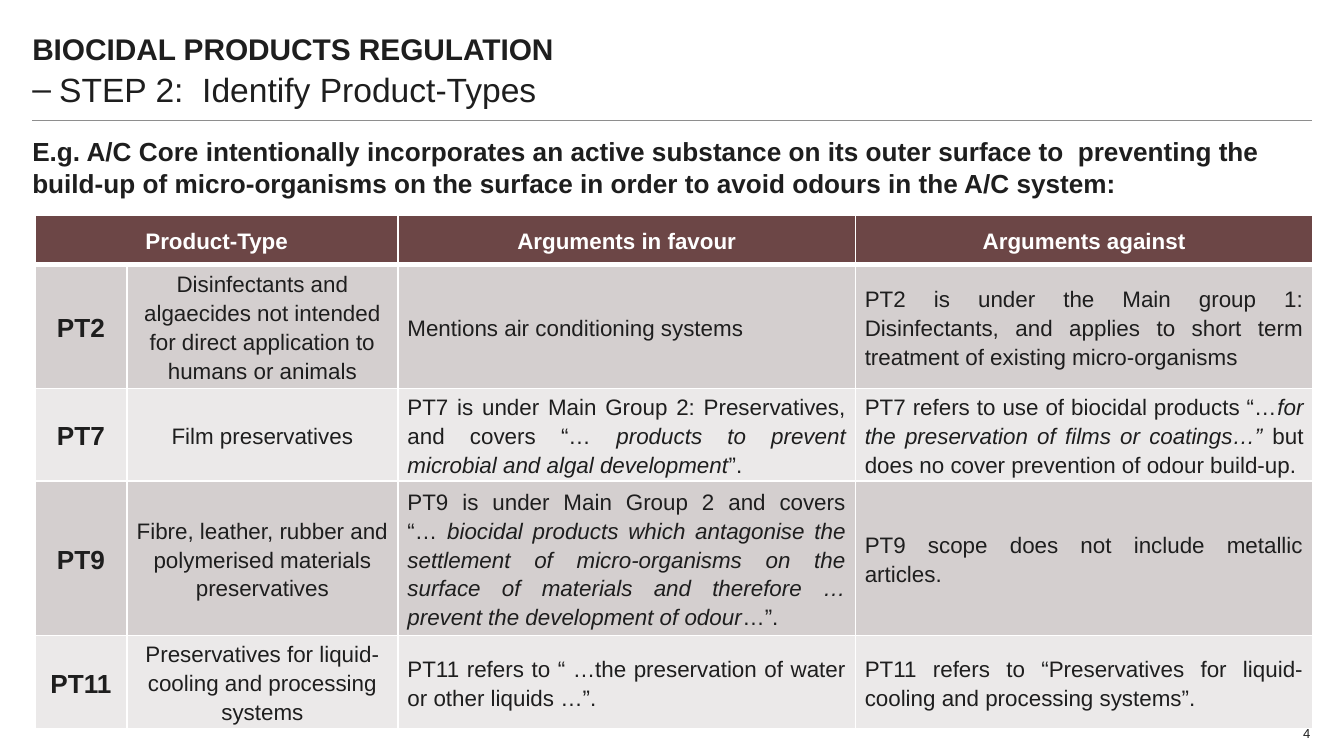
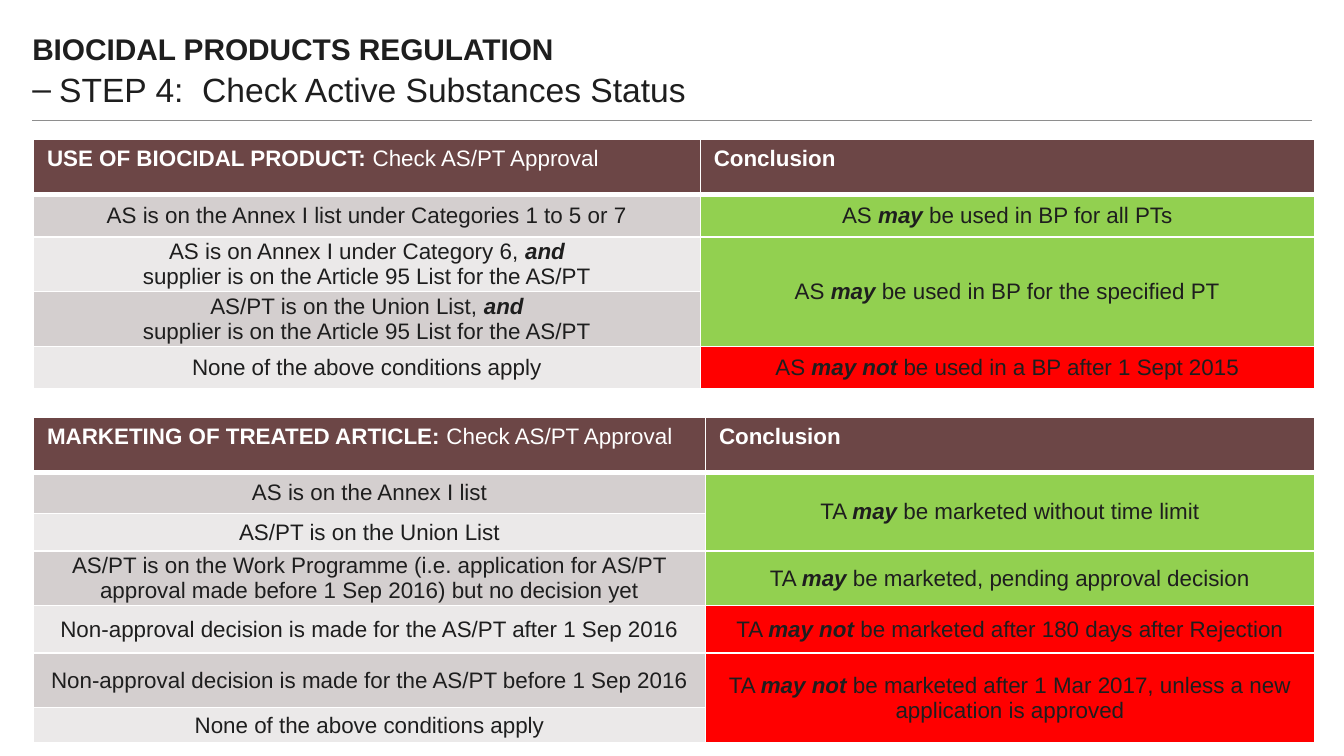
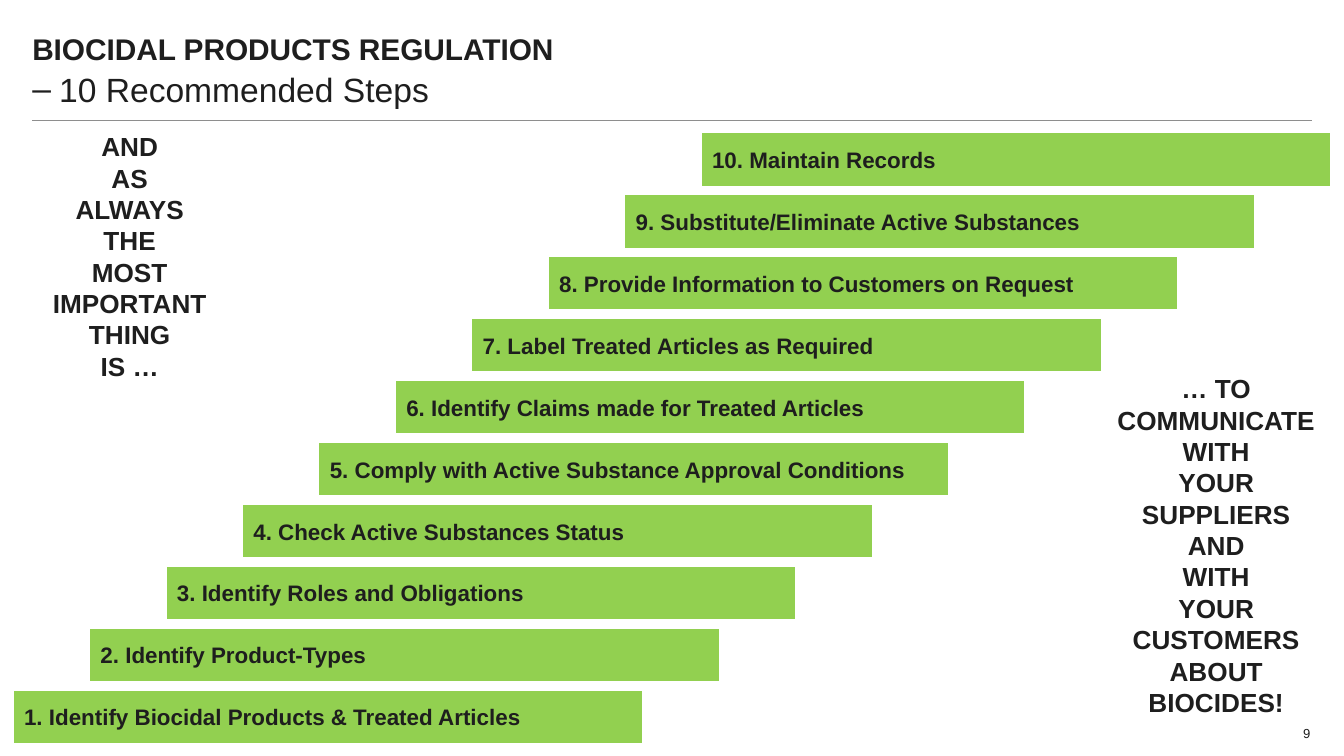
import pptx
import pptx.dml.color
import pptx.enum.shapes
import pptx.enum.text
import pptx.oxml
import pptx.oxml.ns
import pptx.util
from lxml import etree

Pt = pptx.util.Pt
ALIGN = pptx.enum.text.PP_ALIGN
ANCHOR = pptx.enum.text.MSO_ANCHOR

FONT = "Arial"
INK, WHITE, RULE = "1E1E1E", "FFFFFF", "8E8E8E"
HEADER, BANDS = "6C4646", ("D4CFCF", "EBE9E9")
YES, NO = "92D050", "FF0000"
MARGIN, CONTENT_WIDTH = 17.3, 685.4
THIN, THICK = 1, 3
BOLD_ITALIC = {"bold": True, "italic": True}


def colour(value):
    return pptx.dml.color.RGBColor.from_string(value)


def add_element(parent, tag, **attributes):
    return etree.SubElement(parent, pptx.oxml.ns.qn(tag), attributes)


def write(frame, text, size=12, fill=INK, bold=False, emphasis=None,
          align=ALIGN.LEFT, spacing=None, bullet=None, indent=0):
    """Fill a text frame; pieces between bars | take the emphasis format."""
    frame.word_wrap = True
    para = frame.paragraphs[0]
    para.alignment = align
    if spacing:
        para.line_spacing = spacing
    if bullet:
        properties = para._p.get_or_add_pPr()
        properties.set("marL", str(Pt(indent)))
        properties.set("indent", str(-Pt(indent)))
        add_element(properties, "a:buFont", typeface=FONT)
        add_element(properties, "a:buChar", char=bullet)
    for number, piece in enumerate(text.split("|")):
        style = {"bold": bold, "italic": False}
        if number % 2:
            style.update(emphasis or {})
        for line_number, line in enumerate(piece.split("\n")):
            if line_number:
                para.add_line_break()
            if not line:
                continue
            span = para.add_run()
            span.text = line
            span.font.name, span.font.size = FONT, Pt(size)
            span.font.bold, span.font.italic = style["bold"], style["italic"]
            span.font.color.rgb = colour(fill)


def add_text(page, left, top, width, height, text, anchor=ANCHOR.TOP, **style):
    box = page.shapes.add_textbox(Pt(left), Pt(top), Pt(width), Pt(height))
    frame = box.text_frame
    frame.margin_left = frame.margin_right = 0
    frame.margin_top = frame.margin_bottom = 0
    frame.vertical_anchor = anchor
    write(frame, text, **style)


def add_page(deck, title, number=None):
    """Add a page with the shared rule, heading, title and page number."""
    page = deck.slides.add_slide(deck.slide_layouts[6])
    line = page.shapes.add_connector(
        pptx.enum.shapes.MSO_CONNECTOR.STRAIGHT,
        Pt(MARGIN), Pt(64.8), Pt(MARGIN + CONTENT_WIDTH), Pt(64.8))
    line.line.color.rgb = colour(RULE)
    line.line.width = Pt(0.5)
    add_element(line._element.spPr, "a:effectLst")
    add_text(page, MARGIN, 36.7, 522, 24.5, title, size=18, bullet="–", indent=14.4)
    add_text(page, MARGIN, 16.6, 522, 21.6, "BIOCIDAL PRODUCTS REGULATION",
             size=16, bold=True)
    if number:
        add_text(page, 671, 365.8, 31, 31, number, anchor=ANCHOR.BOTTOM,
                 size=7, align=ALIGN.RIGHT)
    return page


def add_borders(cell, top, bottom):
    properties = cell._tc.get_or_add_tcPr()
    edges = {"a:lnL": THIN, "a:lnR": THIN, "a:lnT": top, "a:lnB": bottom}
    for tag, width in edges.items():
        edge = add_element(properties, tag, w=str(Pt(width)))
        add_element(add_element(edge, "a:solidFill"), "a:srgbClr", val=WHITE)


def paint(cell, value):
    cell.fill.solid()
    cell.fill.fore_color.rgb = colour(value)


def add_grid(page, left, top, widths, heights):
    """Add a table with a dark header row and banded rows, still without text."""
    frame = page.shapes.add_table(len(heights), len(widths), Pt(left), Pt(top),
                                  Pt(sum(widths)), Pt(sum(heights)))
    table = frame.table
    table.first_row = table.horz_banding = False
    for column, width in zip(table.columns, widths):
        column.width = Pt(width)
    for index, (row, height) in enumerate(zip(table.rows, heights)):
        row.height = Pt(height)
        for cell in row.cells:
            add_borders(cell, THICK if index == 1 else THIN,
                        THIN if index else THICK)
            paint(cell, BANDS[(index - 1) % 2] if index else HEADER)
    return table


def write_cell(cell, text, **style):
    cell.margin_left = cell.margin_right = Pt(5)
    cell.margin_top = cell.margin_bottom = 0
    cell.vertical_anchor = ANCHOR.MIDDLE
    write(cell.text_frame, text, **style)


def add_argument_table(page, left, top, headings, rows):
    table = add_grid(page, left, top, [49, 145.4, 245, 245],
                     [26.6] + [41] * len(rows))
    table.cell(0, 0).merge(table.cell(0, 1))
    for column, heading in zip((0, 2, 3), headings):
        write_cell(table.cell(0, column), heading, fill=WHITE, bold=True,
                   align=ALIGN.CENTER, spacing=1.15)
    styles = [{"size": 14, "bold": True, "align": ALIGN.CENTER},
              {"align": ALIGN.CENTER},
              {"align": ALIGN.JUSTIFY},
              {"align": ALIGN.JUSTIFY}]
    for index, row in enumerate(rows, 1):
        for column, (text, style) in enumerate(zip(row, styles)):
            write_cell(table.cell(index, column), text, spacing=1.15,
                       emphasis={"italic": True}, **style)


def add_status_table(page, left, top, widths, heights, heading, conditions, conclusions):
    """Conclusions are (text, fill, number of conditions covered)."""
    table = add_grid(page, left, top, widths, heights)
    for column, text in enumerate((heading, "|Conclusion|")):
        write(table.cell(0, column).text_frame, text, fill=WHITE,
              emphasis={"bold": True})
    centred = {"align": ALIGN.CENTER, "emphasis": BOLD_ITALIC}
    for index, text in enumerate(conditions, 1):
        write_cell(table.cell(index, 0), text, **centred)
    first = 1
    for text, fill, covered in conclusions:
        cell = table.cell(first, 1)
        for index in range(first, first + covered):
            paint(table.cell(index, 1), fill)
        if covered > 1:
            cell.merge(table.cell(first + covered - 1, 1))
        write_cell(cell, text, **centred)
        first += covered


def add_staircase(page, left, bottom, steps):
    """Stack the numbered steps upwards, each one further right."""
    width, height, shift, rise = 339.8, 31, 40.95, 33.18
    for index, step in enumerate(steps):
        bar = page.shapes.add_shape(
            pptx.enum.shapes.MSO_SHAPE.RECTANGLE, Pt(left + index * shift),
            Pt(bottom - height - index * rise), Pt(width), Pt(height))
        bar.shadow.inherit = False
        paint(bar, YES)
        bar.line.color.rgb = colour(WHITE)
        bar.line.width = Pt(THICK)
        bar.text_frame.vertical_anchor = ANCHOR.MIDDLE
        write(bar.text_frame, f"{index + 1}. {step}", bold=True)


def build_product_types(deck):
    page = add_page(deck, "STEP 2:  Identify Product-Types", "4")
    add_argument_table(
        page, 18.9, 115.2,
        ["Product-Type", "Arguments in favour", "Arguments against"],
        [
            ("PT2",
             "Disinfectants and algaecides not intended for direct application "
             "to humans or animals",
             "Mentions air conditioning systems",
             "PT2 is under the Main group 1: Disinfectants, and applies to short "
             "term treatment of existing micro-organisms"),
            ("PT7", "Film preservatives",
             "PT7 is under Main Group 2: Preservatives, and covers “… |products to "
             "prevent microbial and algal development|”.",
             "PT7 refers to use of biocidal products “…|for the preservation of "
             "films or coatings…” |but does no cover prevention of odour build-up."),
            ("PT9",
             "Fibre, leather, rubber and polymerised materials preservatives",
             "PT9 is under Main Group 2 and covers\n“… |biocidal products which "
             "antagonise the settlement of micro-organisms on the surface of "
             "materials and therefore … prevent the development of odour|…”.",
             "PT9 scope does not include metallic articles."),
            ("PT11", "Preservatives for liquid-cooling and processing systems",
             "PT11 refers to “ …the preservation of water or other liquids …”.",
             "PT11 refers to “Preservatives for liquid-cooling and processing "
             "systems”."),
        ])
    add_text(page, MARGIN, 72.7, CONTENT_WIDTH, 40,
             "E.g. A/C Core intentionally incorporates an active substance on its "
             "outer surface to  preventing the build-up of micro-organisms on the "
             "surface in order to avoid odours in the A/C system:",
             size=14, bold=True)


def build_substance_status(deck):
    page = add_page(deck, "STEP 4:  Check Active Substances Status")
    add_status_table(
        page, 18, 74.5, [357.2, 329], [29.6, 22.8, 29.4, 29.4, 22.8],
        "|USE OF BIOCIDAL PRODUCT: |Check AS/PT Approval",
        ["AS is on the Annex I list under Categories 1 to 5 or 7",
         "AS is on Annex I under Category 6, |and\n|"
         "supplier is on the Article 95 List for the AS/PT",
         "AS/PT is on the Union List, |and\n|"
         "supplier is on the Article 95 List for the AS/PT",
         "None of the above conditions apply"],
        [("AS |may| be used in BP for all PTs", YES, 1),
         ("AS |may| be used in BP for the specified PT", YES, 2),
         ("AS |may not| be used in a BP after 1 Sept 2015", NO, 1)])
    add_status_table(
        page, 18, 223.5, [360, 326.2], [29.6, 22, 20, 29.4, 25.2, 29.4, 19],
        "|MARKETING OF TREATED ARTICLE:| Check AS/PT Approval",
        ["AS is on the Annex I list",
         "AS/PT is on the Union List",
         "AS/PT is on the Work Programme (i.e. application for AS/PT approval "
         "made before 1 Sep 2016) but no decision yet",
         "Non-approval decision is made for the AS/PT after 1 Sep 2016",
         "Non-approval decision is made for the AS/PT before 1 Sep 2016",
         "None of the above conditions apply"],
        [("TA |may| be marketed without time limit", YES, 2),
         ("TA |may| be marketed, pending approval decision", YES, 1),
         ("TA |may not |be marketed after 180 days after Rejection", NO, 1),
         ("TA |may not |be marketed after 1 Mar 2017, unless a new application "
          "is approved", NO, 2)])


def build_recommended_steps(deck):
    page = add_page(deck, "10 Recommended Steps", "9")
    add_staircase(page, 5.8, 399.6, [
        "Identify Biocidal Products & Treated Articles",
        "Identify Product-Types",
        "Identify Roles and Obligations",
        "Check Active Substances Status",
        "Comply with Active Substance Approval Conditions",
        "Identify Claims made for Treated Articles",
        "Label Treated Articles as Required",
        "Provide Information to Customers on Request",
        "Substitute/Eliminate Active Substances",
        "Maintain Records",
    ])
    slogan = {"size": 14, "bold": True, "align": ALIGN.CENTER}
    add_text(page, 591.8, 100.8, 119.5, 283.7,
             "… TO\nCOMMUNICATE\nWITH\nYOUR\nSUPPLIERS\nAND\nWITH\nYOUR\n"
             "CUSTOMERS\nABOUT\nBIOCIDES!", anchor=ANCHOR.BOTTOM, **slogan)
    add_text(page, 18, 70, 103, 283.7,
             "AND\nAS\nALWAYS\nTHE\nMOST\nIMPORTANT\nTHING\nIS …", **slogan)


def main():
    deck = pptx.Presentation()
    deck.slide_width, deck.slide_height = Pt(720), Pt(405)
    build_product_types(deck)
    build_substance_status(deck)
    build_recommended_steps(deck)
    deck.save("out.pptx")


if __name__ == "__main__":
    main()
